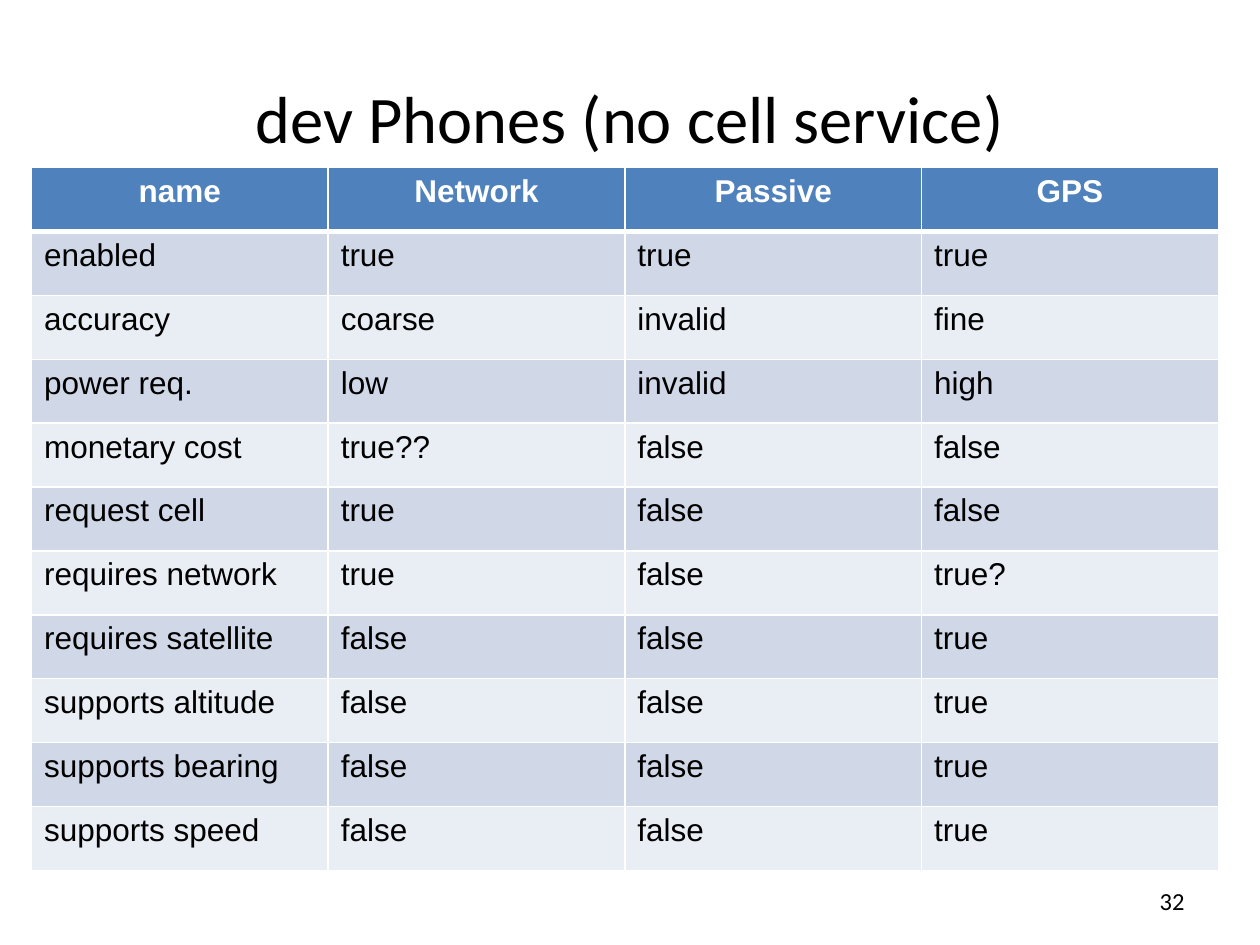
from dataclasses import dataclass

from lxml import etree
from pptx import Presentation
from pptx import util as u
from pptx.dml.color import RGBColor
from pptx.enum import text
from pptx.oxml import ns


@dataclass(frozen=True)
class Theme:
    ink: str = "000000"
    white: str = "FFFFFF"
    header: str = "4F81BD"
    bands: tuple = ("D0D8E8", "E9EDF4")
    heading_font: str = "Calibri"
    table_font: str = "Arial"
    title_size: int = 38
    table_size: int = 18
    number_size: int = 14
    thin: int = 1
    thick: int = 3


THEME = Theme()

PROVIDERS = [
    ("name", "Network", "Passive", "GPS"),
    ("enabled", "true", "true", "true"),
    ("accuracy", "coarse", "invalid", "fine"),
    ("power req.", "low", "invalid", "high"),
    ("monetary cost", "true??", "false", "false"),
    ("request cell", "true", "false", "false"),
    ("requires network", "true", "false", "true?"),
    ("requires satellite", "false", "false", "true"),
    ("supports altitude", "false", "false", "true"),
    ("supports bearing", "false", "false", "true"),
    ("supports speed", "false", "false", "true"),
]


def style_paragraph(para, font, size, color, align, bold=False):
    para.alignment = align
    para.font.name = font
    para.font.size = u.Pt(size)
    para.font.bold = bold
    para.font.color.rgb = RGBColor.from_string(color)


def add_label(page, box, words, size, align):
    frame = page.shapes.add_textbox(*map(u.Inches, box)).text_frame
    frame.word_wrap = True
    frame.vertical_anchor = text.MSO_ANCHOR.MIDDLE
    para = frame.paragraphs[0]
    para.text = words
    style_paragraph(para, THEME.heading_font, size, THEME.ink, align)


def set_borders(cell, top, bottom):
    properties = cell._tc.get_or_add_tcPr()
    widths = {"lnL": THEME.thin, "lnR": THEME.thin, "lnT": top, "lnB": bottom}
    for side, width in widths.items():
        line = etree.SubElement(properties, ns.qn(f"a:{side}"), w=str(u.Pt(width)))
        fill = etree.SubElement(line, ns.qn("a:solidFill"))
        etree.SubElement(fill, ns.qn("a:srgbClr"), val=THEME.white)


def style_cell(cell, row):
    is_header = row == 0
    set_borders(
        cell,
        top=THEME.thick if row == 1 else THEME.thin,
        bottom=THEME.thick if is_header else THEME.thin,
    )
    cell.fill.solid()
    fill = THEME.header if is_header else THEME.bands[(row - 1) % 2]
    cell.fill.fore_color.rgb = RGBColor.from_string(fill)
    style_paragraph(
        cell.text_frame.paragraphs[0],
        THEME.table_font,
        THEME.table_size,
        THEME.white if is_header else THEME.ink,
        text.PP_ALIGN.CENTER if is_header else text.PP_ALIGN.LEFT,
        bold=is_header,
    )


def add_provider_table(page, box, rows):
    left, top, width, height = map(u.Inches, box)
    table = page.shapes.add_table(
        len(rows), len(rows[0]), left, top, width, height
    ).table
    for row, values in enumerate(rows):
        for column, value in enumerate(values):
            cell = table.cell(row, column)
            cell.text = value
            style_cell(cell, row)


def main():
    deck = Presentation()
    deck.slide_width, deck.slide_height = u.Inches(10), u.Inches(7.5)
    page = deck.slides.add_slide(deck.slide_layouts[6])
    add_label(page, (0.5, 0.3, 9, 1.25), "dev Phones (no cell service)",
              THEME.title_size, text.PP_ALIGN.CENTER)
    add_label(page, (7.17, 6.95, 2.33, 0.4), "32",
              THEME.number_size, text.PP_ALIGN.RIGHT)
    add_provider_table(page, (0.25, 1.33, 9.42, 5.58), PROVIDERS)
    deck.save("out.pptx")


if __name__ == "__main__":
    main()
